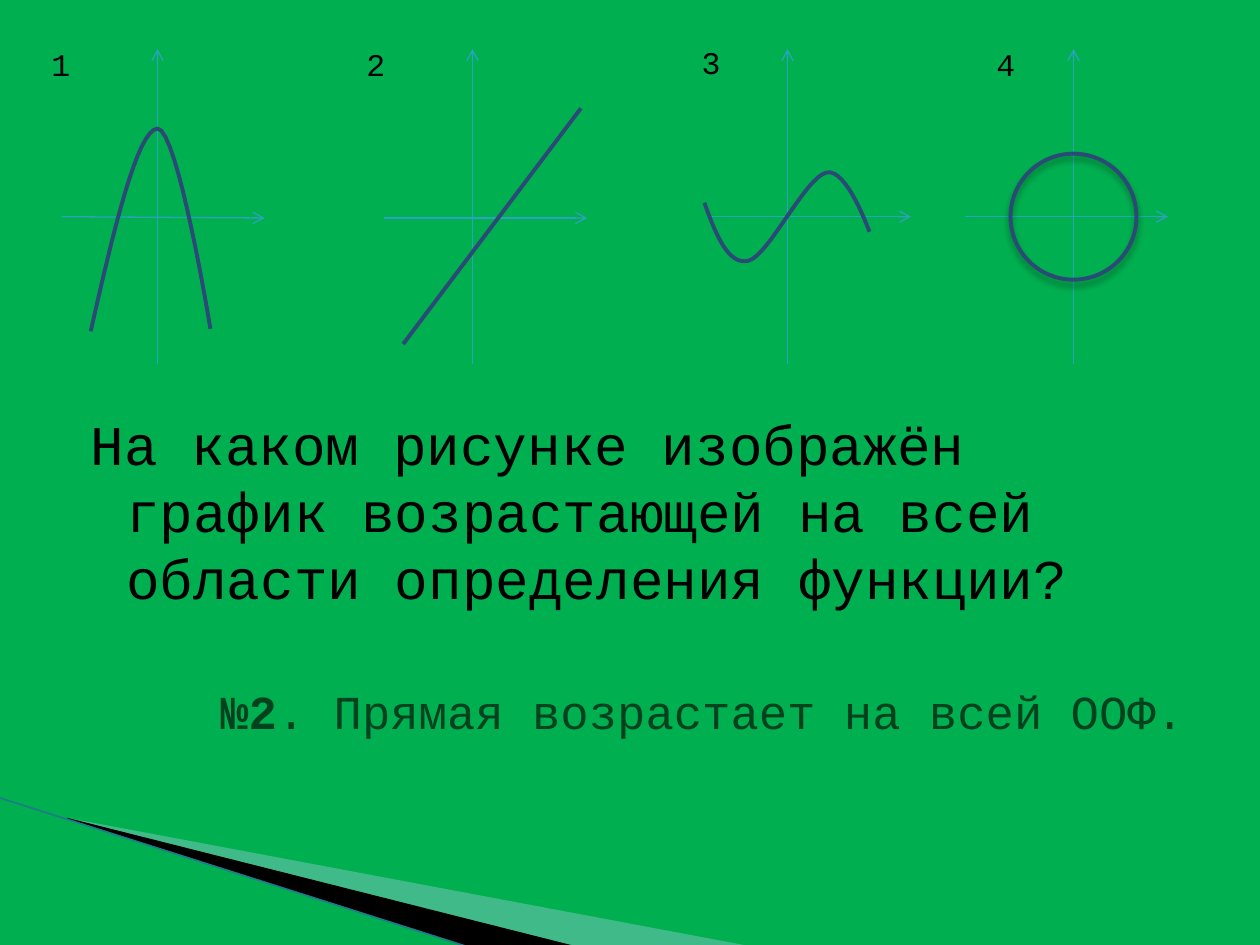
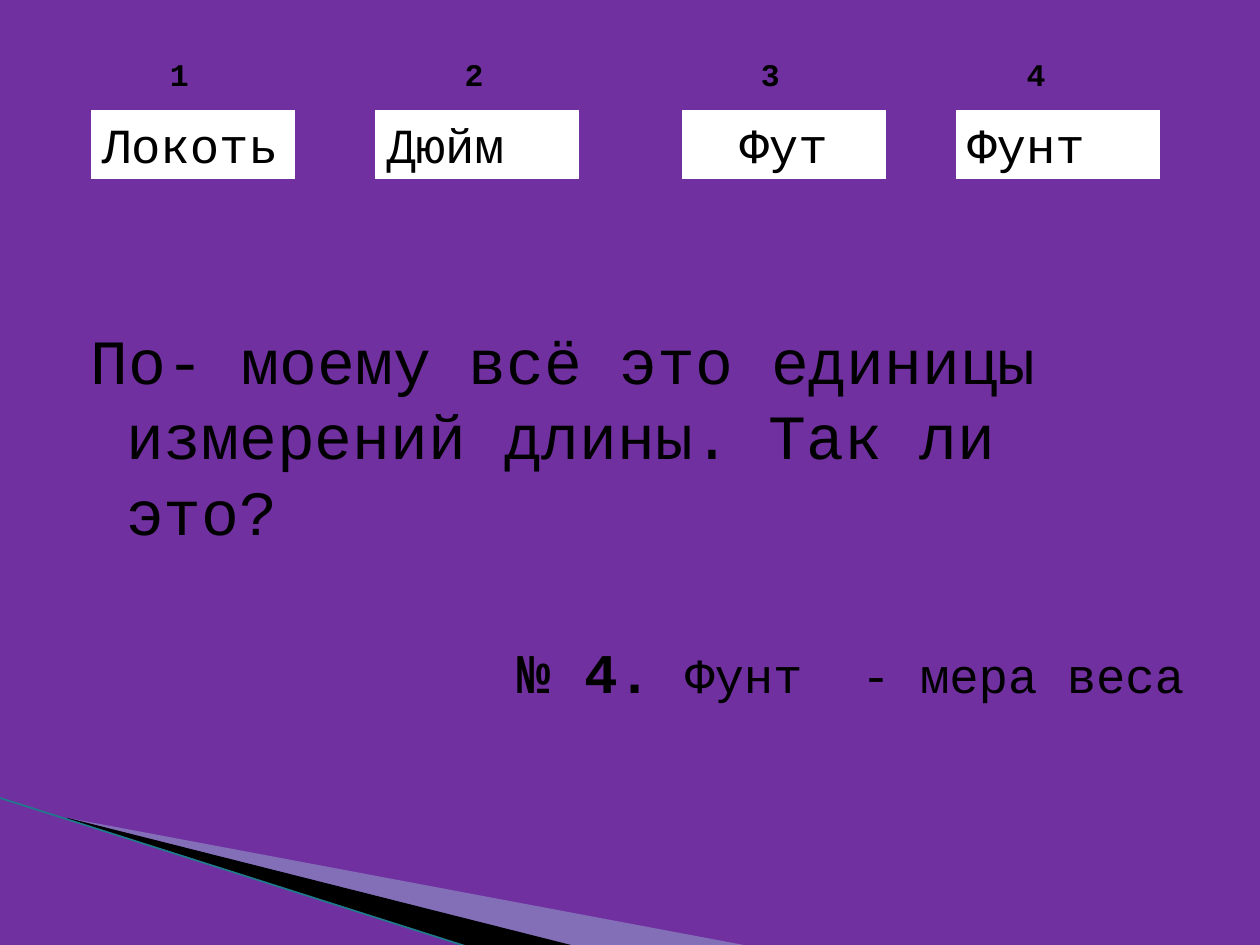
from pptx import Presentation
from pptx.dml.color import RGBColor
from pptx.enum.shapes import MSO_CONNECTOR as Link, MSO_SHAPE as Kind
from pptx.enum.text import MSO_AUTO_SIZE as Fit, MSO_ANCHOR as Anchor, PP_ALIGN as Align
from pptx.oxml import parse_xml
from pptx.oxml.ns import nsdecls, qn
from pptx.util import Inches, Pt

FONT = "Courier New"
BLACK, WHITE, AXIS, CURVE, EDGE = "000000", "FFFFFF", "2DA2BF", "2B4A76", "1F7A8C"
GREEN, DARK, VIOLET = "00B050", "00421E", "7030A0"
BANDS = [
    ("A0CBDC", 40, [(0.53, 6.49), (5.96, 7.51), (4.56, 7.51), (0.53, 6.49)]),
    (BLACK, 100, [(0.53, 6.49), (4.57, 7.51), (3.74, 7.52), (0.54, 6.5)]),
]

GRAPHS = [
    {"no": "1", "label": (0.31, 0.31), "left": 0.49, "mid": 1.25, "ends": (1.72, 1.73)},
    {"no": "2", "label": (2.81, 0.31), "left": 3.05, "mid": 3.75, "ends": (1.73, 1.73)},
    {"no": "3", "label": (5.47, 0.29), "left": 5.62, "mid": 6.25, "ends": (1.72, 1.72)},
    {"no": "4", "label": (7.81, 0.31), "left": 7.66, "mid": 8.52, "ends": (1.72, 1.72)},
]
PARABOLA = [(0.72, 2.63), (0.9, 1.83), (1.09, 1.03), (1.25, 1.02),
            (1.41, 1.02), (1.67, 2.61), (1.67, 2.61)]
WAVE = [(5.59, 1.61), (5.68, 1.86), (5.78, 2.11), (5.94, 2.07), (6.1, 2.03),
        (6.39, 1.41), (6.56, 1.37), (6.72, 1.33), (6.9, 1.84), (6.9, 1.84)]
UNITS = [
    ("1", 1.25, "Локоть", 0.71, Align.LEFT),
    ("2", 3.59, "Дюйм", 2.97, Align.LEFT),
    ("3", 5.94, "Фут", 5.4, Align.CENTER),
    ("4", 8.05, "Фунт", 7.58, Align.LEFT),
]
GROWTH = {
    "top": 3.2, "size": 32, "gap": 40.5,
    "ask": "На каком рисунке изображён график возрастающей на всей области определения функции?",
    "reply": [("№2", 27, True, DARK), (". Прямая возрастает на всей ООФ.", 27, False, DARK)],
}
LENGTH = {
    "top": 2.5, "size": 36, "gap": 51,
    "ask": "По- моему всё это единицы измерений длины. Так ли это?",
    "reply": [("№ 4. ", 32, True, BLACK), ("Фунт  - мера веса", 28, False, BLACK)],
}


def rgb(code):
    return RGBColor.from_string(code)


def style(run, size, bold=False, color=BLACK):
    run.font.name, run.font.size, run.font.bold = FONT, Pt(size), bold
    run.font.color.rgb = rgb(color)


def line(slide, start, end, color, width, arrow=False):
    x, y, u, v = map(Inches, (*start, *end))
    link = slide.shapes.add_connector(Link.STRAIGHT, x, y, u, v)
    link.line.color.rgb, link.line.width = rgb(color), Pt(width)
    if arrow:
        link.line._get_or_add_ln().append(parse_xml(f'<a:tailEnd {nsdecls("a")} type="arrow"/>'))
    link._element.spPr.append(parse_xml(f'<a:effectLst {nsdecls("a")}/>'))


def outline(slide, points, close):
    spots = [(Inches(x), Inches(y)) for x, y in points]
    form = slide.shapes.build_freeform(*spots[0])
    form.add_line_segments(spots[1:], close=close)
    shape = form.convert_to_shape()
    shape.shadow.inherit = False
    return shape


def stroke(shape):
    shape.fill.background()
    shape.line.color.rgb, shape.line.width = rgb(CURVE), Pt(2.25)


def curve(slide, knots, steps=16):
    """Draw joined cubic arcs whose knots and handles are listed in order."""
    points = [knots[0]]
    for i in range(0, len(knots) - 1, 3):
        arc = knots[i:i + 4]
        for k in range(1, steps + 1):
            t = k / steps
            parts = ((1 - t) ** 3, 3 * t * (1 - t) ** 2, 3 * t * t * (1 - t), t ** 3)
            points.append(tuple(sum(p * spot[d] for p, spot in zip(parts, arc)) for d in (0, 1)))
    stroke(outline(slide, points, False))


def label(slide, text, box, size, bold=False, align=Align.LEFT):
    shape = slide.shapes.add_textbox(*map(Inches, box))
    frame = shape.text_frame
    frame.word_wrap, frame.auto_size = True, Fit.NONE
    frame.text = text
    frame.paragraphs[0].alignment = align
    style(frame.paragraphs[0].runs[0], size, bold)
    return shape


def base(deck, color):
    slide = deck.slides.add_slide(deck.slide_layouts[1])
    title = slide.shapes.title._element
    title.getparent().remove(title)
    slide.background.fill.solid()
    slide.background.fill.fore_color.rgb = rgb(color)
    for tint, alpha, points in BANDS:
        band = outline(slide, points, True)
        band.fill.solid()
        band.fill.fore_color.rgb = rgb(tint)
        band.line.fill.background()
        if alpha < 100:
            tone = band._element.spPr.find(qn("a:solidFill"))[0]
            tone.append(parse_xml(f'<a:alpha {nsdecls("a")} val="{alpha * 1000}"/>'))
    line(slide, (-0.01, 6.33), (3.73, 7.52), EDGE, 0.95)
    return slide


def quiz(slide, part):
    body = slide.placeholders[1]
    body.left, body.top = Inches(0.5), Inches(part["top"])
    body.width, body.height = Inches(9), Inches(6.57 - part["top"])
    frame = body.text_frame
    frame.word_wrap, frame.auto_size = True, Fit.NONE
    frame.vertical_anchor = Anchor.TOP
    ask, reply = frame.paragraphs[0], frame.add_paragraph()
    for para, gap in ((ask, 0), (reply, part["gap"])):
        props = para._p.get_or_add_pPr()
        props.set("marL", str(Inches(0.4)))
        props.set("indent", str(Inches(-0.28)))
        props.append(parse_xml(f'<a:buNone {nsdecls("a")}/>'))
        para.space_before = Pt(gap)
    ask.text = part["ask"]
    style(ask.runs[0], part["size"])
    reply.alignment = Align.RIGHT
    for text, size, bold, color in part["reply"]:
        run = reply.add_run()
        run.text = text
        style(run, size, bold, color)


def graphs(deck):
    slide = base(deck, GREEN)
    quiz(slide, GROWTH)
    for g in GRAPHS:
        start, end = g["ends"]
        line(slide, (g["mid"], 2.89), (g["mid"], 0.39), AXIS, 0.75, True)
        line(slide, (g["left"], start), (g["left"] + 1.61, end), AXIS, 0.75, True)
        label(slide, g["no"], (*g["label"], 0.36, 0.4), 18)
    ring = slide.shapes.add_shape(Kind.OVAL, *map(Inches, (8.02, 1.22, 1, 1)))
    stroke(ring)
    ring._element.spPr.append(parse_xml(
        f'<a:effectLst {nsdecls("a")}><a:outerShdw blurRad="{Pt(4)}" dist="{Pt(3)}" '
        f'dir="5400000" rotWithShape="0"><a:srgbClr val="{BLACK}"><a:alpha val="35000"/>'
        '</a:srgbClr></a:outerShdw></a:effectLst>'))
    curve(slide, PARABOLA)
    curve(slide, WAVE)
    line(slide, (3.2, 2.73), (4.61, 0.86), CURVE, 2.25)


def units(deck):
    slide = base(deck, VIOLET)
    quiz(slide, LENGTH)
    for no, x, name, left, align in UNITS:
        card = label(slide, name, (left, 0.86, 1.64, 0.57), 28, align=align)
        card.fill.solid()
        card.fill.fore_color.rgb = rgb(WHITE)
        card.line.color.rgb, card.line.width = rgb(VIOLET), Pt(1.5)
        label(slide, no, (x, 0.39, 0.47, 0.4), 18, True)


def main():
    deck = Presentation()
    deck.slide_width, deck.slide_height = Inches(10), Inches(7.5)
    graphs(deck)
    units(deck)
    deck.save("out.pptx")


if __name__ == "__main__":
    main()
